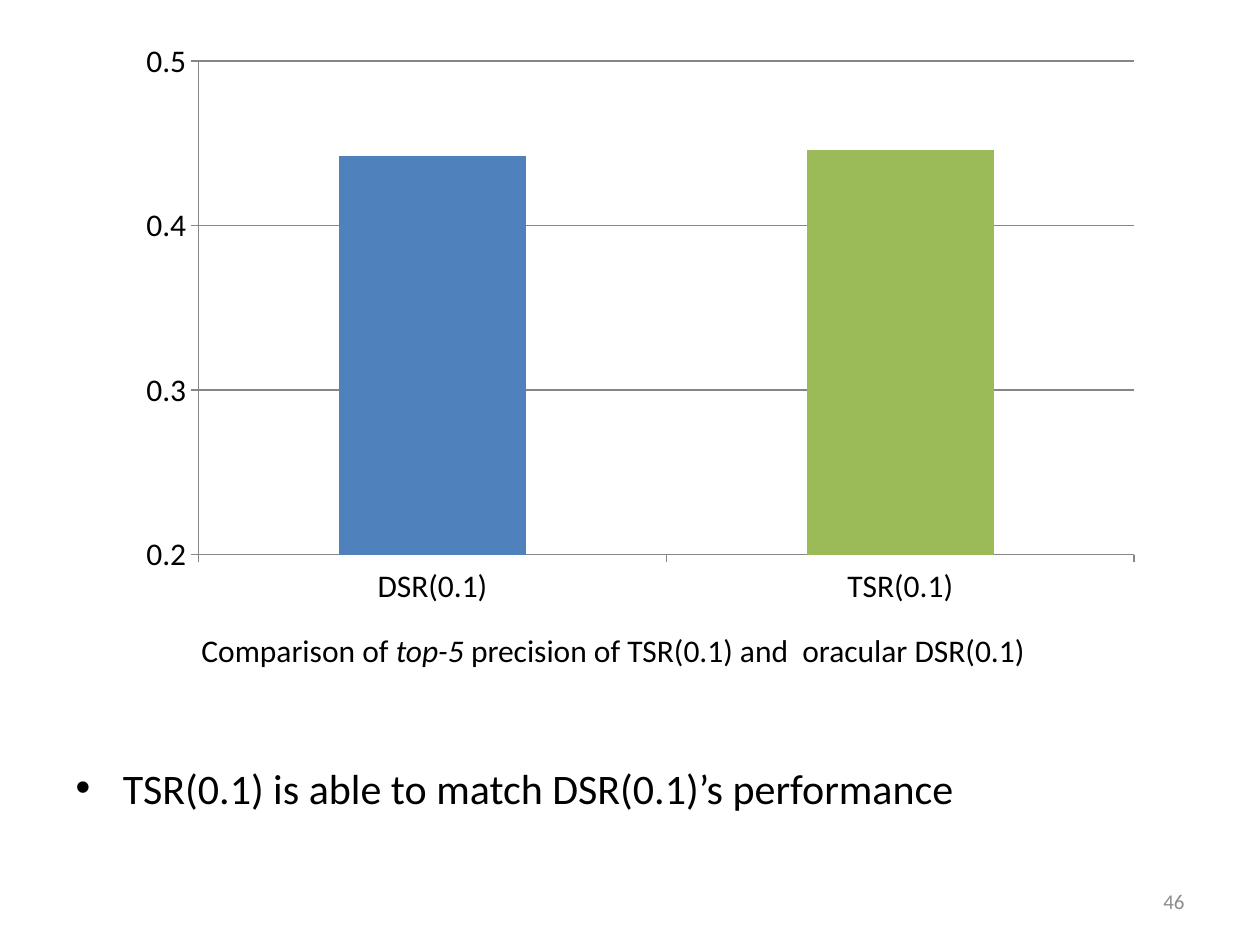
from lxml.etree import SubElement
from pptx import Presentation
from pptx.chart.data import CategoryChartData as ChartData
from pptx.dml.color import RGBColor
from pptx.enum.chart import XL_CHART_TYPE as Kind, XL_TICK_MARK as Tick
from pptx.enum.text import MSO_ANCHOR as Anchor, PP_ALIGN as Align
from pptx.oxml.ns import qn
from pptx.util import Pt

BLACK = RGBColor(0, 0, 0)
GREY = RGBColor(0x8C, 0x8C, 0x8C)
LINE = RGBColor(0x86, 0x86, 0x86)
BLUE = RGBColor(0x4F, 0x81, 0xBD)
GREEN = RGBColor(0x9B, 0xBB, 0x59)
FACE = "Calibri"


def style(font, size, color=BLACK):
    """Set face, size and colour of a font."""
    font.name = FACE
    font.size = Pt(size)
    font.color.rgb = color


def add_label(slide, box, runs, size, color=BLACK, align=Align.LEFT, anchor=Anchor.TOP):
    """Add a text box of (text, italic) runs."""
    frame = slide.shapes.add_textbox(*map(Pt, box)).text_frame
    frame.word_wrap = True
    frame.vertical_anchor = anchor
    para = frame.paragraphs[0]
    para.alignment = align
    style(para.font, size, color)
    for text, italic in runs:
        run = para.add_run()
        run.text = text
        if italic:
            run.font.italic = True


def fill_body(slide, box, text):
    """Place the bulleted body placeholder and write its text."""
    body = slide.placeholders[1]
    body.left, body.top, body.width, body.height = map(Pt, box)
    body.text_frame.text = text
    style(body.text_frame.paragraphs[0].font, 24)


def place_plot(chart, **sides):
    """Fix the inner plot area as fractions of the chart."""
    area = chart._chartSpace.chart.plotArea
    for old in area.findall(qn("c:layout")):
        area.remove(old)
    layout = SubElement(area, qn("c:layout"))
    area.insert(0, layout)
    manual = SubElement(layout, qn("c:manualLayout"))
    parts = {"layoutTarget": "inner", "xMode": "edge", "yMode": "edge", **sides}
    for tag, val in parts.items():
        SubElement(manual, qn(f"c:{tag}")).set("val", str(val))


def add_bars(slide, box, values, colors):
    """Add the precision column chart."""
    data = ChartData()
    data.categories = list(values)
    data.add_series("Series 1", list(values.values()))
    chart = slide.shapes.add_chart(Kind.COLUMN_CLUSTERED, *map(Pt, box), data).chart
    chart.has_title = chart.has_legend = False
    style(chart.font, 10)
    plot = chart.plots[0]
    plot.vary_by_categories = False
    plot.gap_width = 150
    for index, color in enumerate(colors):
        fill = plot.series[0].points[index].format.fill
        fill.solid()
        fill.fore_color.rgb = color
    axis = chart.value_axis
    axis.minimum_scale, axis.maximum_scale, axis.major_unit = 0.2, 0.5, 0.1
    axis.tick_labels.number_format = "0.0"
    axis.tick_labels.number_format_is_linked = False
    axis.major_gridlines.format.line.color.rgb = LINE
    for axis in (chart.category_axis, chart.value_axis):
        style(axis.tick_labels.font, 18)
        axis.format.line.color.rgb = LINE
        axis.major_tick_mark = Tick.OUTSIDE
    place_plot(chart, x=0.08, y=0.05, w=0.9, h=0.84)


def main():
    """Build and save the slide."""
    deck = Presentation()
    deck.slide_width, deck.slide_height = Pt(720), Pt(540)
    slide = deck.slides.add_slide(deck.slide_layouts[1])
    title = slide.shapes.title.element
    title.getparent().remove(title)
    add_label(slide, (516, 500.5, 168, 28.75), [("46", False)], 12, GREY, Align.RIGHT, Anchor.MIDDLE)
    caption = [
        ("Comparison of ", False),
        ("top-5 ", True),
        ("precision of TSR(0.1) and  oracular DSR(0.1)", False),
    ]
    add_label(slide, (108, 357, 528, 29), caption, 18)
    fill_body(slide, (36, 432, 648, 96), "TSR(0.1) is able to match DSR(0.1)’s performance")
    add_bars(slide, (66, 18, 594, 336), {"DSR(0.1)": 0.442, "TSR(0.1)": 0.446}, (BLUE, GREEN))
    deck.save("out.pptx")


if __name__ == "__main__":
    main()
